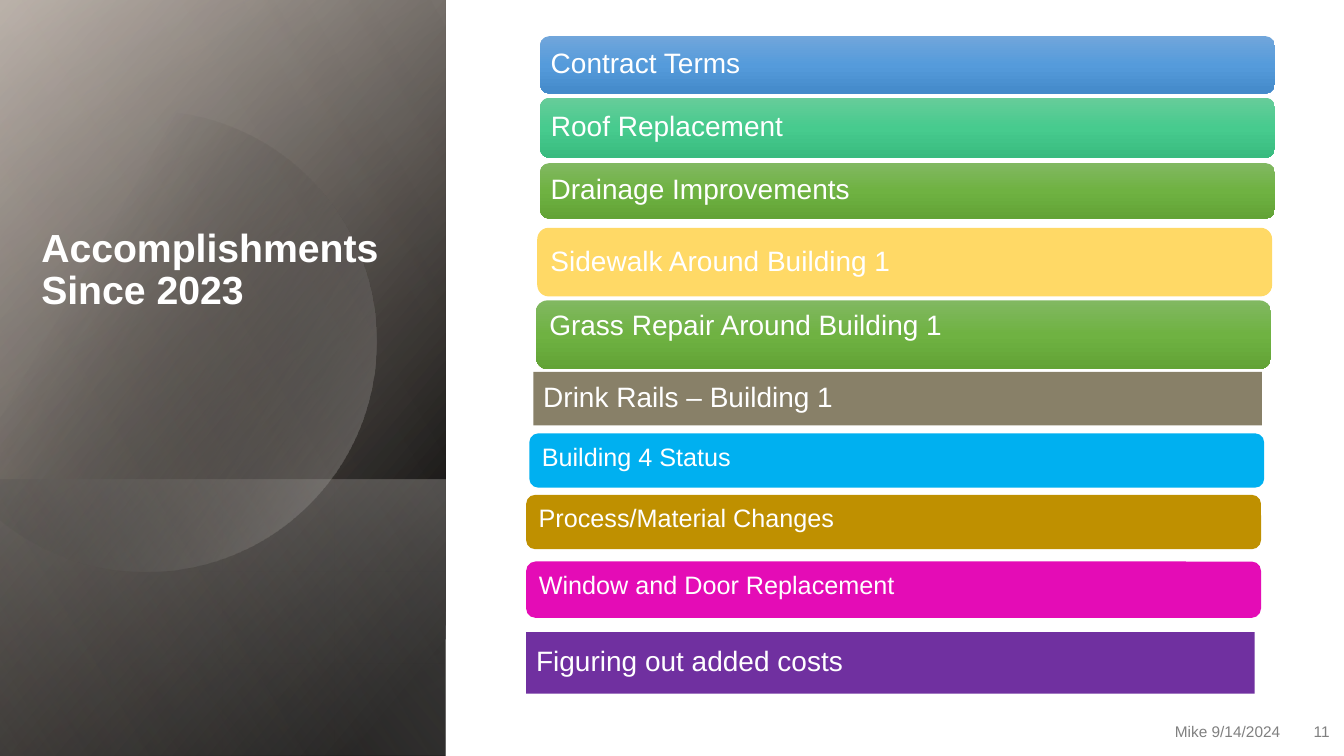
import math
from pptx import Presentation
from pptx import util as u
from pptx.dml.color import RGBColor
from pptx.enum import shapes, text
from pptx.oxml import parse_xml
from pptx.oxml.ns import nsdecls, qn

ROUND = shapes.MSO_SHAPE.ROUNDED_RECTANGLE
RECT = shapes.MSO_SHAPE.RECTANGLE
MIDDLE, TOP, BOTTOM = (text.MSO_ANCHOR.MIDDLE, text.MSO_ANCHOR.TOP,
                       text.MSO_ANCHOR.BOTTOM)

GREEN = ["81B861", "6FB242", "62A336"]
SMALL = {"size": 18, "anchor": TOP, "margins": (0.25, 0.13, 0.25, 0.13), "spacing": 1}
TIGHT = {"margins": (0.2, 0.2, 0.2, 0.2)}
RAISED = {"margins": (0.25, 0, 0.25, 0.43)}

BARS = [
    ("Contract Terms", ROUND, 0.35, 0, 1.45, ["71A6DB", "559BDB", "448ACA"], TIGHT),
    ("Roof Replacement", ROUND, 0.35, 1.55, 1.52, ["67CC9A", "47CB8E", "39BB7F"], TIGHT),
    ("Drainage Improvements", ROUND, 0.35, 3.2, 1.4, GREEN, TIGHT),
    ("Sidewalk Around Building 1", ROUND, 0.28, 4.83, 1.73, "FFD966", {}),
    ("Grass Repair Around Building 1", ROUND, 0.25, 6.66, 1.73, GREEN, RAISED),
    ("Drink Rails – Building 1", RECT, 0.18, 8.46, 1.35, "888068", {}),
    ("Building 4 Status", ROUND, 0.08, 10.01, 1.37, "00B0F0", SMALL),
    ("Process/Material Changes", ROUND, 0, 11.56, 1.37, "BF9000", SMALL),
    ("Window and Door Replacement", ROUND, 0, 13.24, 1.42, "E40CB6", SMALL),
    ("Figuring out added costs", RECT, 0, 15.02, 1.55, "7030A0", {}),
]


def color(value):
    return RGBColor.from_string(value)


def paint(shape, fill, angle=90):
    shape.shadow.inherit = False
    shape.line.fill.background()
    if isinstance(fill, str):
        shape.fill.solid()
        shape.fill.fore_color.rgb = color(fill)
        return
    stops = "".join(
        f'<a:gs pos="{position * 1000}"><a:srgbClr val="{color(value)}">'
        f'<a:alpha val="{alpha * 1000}"/></a:srgbClr></a:gs>'
        for position, value, alpha in fill)
    gradient = parse_xml(
        f'<a:gradFill {nsdecls("a")} rotWithShape="1"><a:gsLst>{stops}</a:gsLst>'
        f'<a:lin ang="{angle * 60000}" scaled="0"/></a:gradFill>')
    shape.fill.background()
    properties = shape._element.spPr
    properties.replace(properties.find(qn("a:noFill")), gradient)


def write(shape, words, size=20, bold=False, value="FFFFFF", anchor=MIDDLE,
          align=text.PP_ALIGN.LEFT, margins=(0.25, 0.25, 0.25, 0.25),
          spacing=0.9, after=0):
    frame = shape.text_frame
    frame.text = words
    left, top, right, bottom = map(u.Cm, margins)
    para = frame.paragraphs[0]
    font = para.runs[0].font
    formats = [
        (frame, {"word_wrap": True, "auto_size": text.MSO_AUTO_SIZE.NONE,
                 "vertical_anchor": anchor, "margin_left": left, "margin_top": top,
                 "margin_right": right, "margin_bottom": bottom}),
        (para, {"alignment": align, "line_spacing": spacing,
                "space_before": u.Pt(0), "space_after": u.Pt(after)}),
        (font, {"name": "Arial", "size": u.Pt(size), "bold": bold}),
    ]
    for target, values in formats:
        for name, setting in values.items():
            setattr(target, name, setting)
    font.color.rgb = color(value)


def add_shade(page, box, stops, angle):
    left, top, width, height = box
    shade = page.shapes.add_shape(
        RECT, u.Cm(left + (width - height) / 2), u.Cm(top + (height - width) / 2),
        u.Cm(height), u.Cm(width))
    shade.rotation = 90
    shade._element.spPr.find(qn("a:xfrm")).set("flipH", "1")
    paint(shade, stops, angle)


def add_disc(page, box):
    left, top, width, height = box
    center_x, center_y, radius, cut = left + 3.68, top + 8.59, 5.8, left - 0.38
    limit = math.acos((cut - center_x) / radius)
    steps = 120
    points = []
    for step in range(steps + 1):
        turn = limit * (2 * step / steps - 1)
        points.append((u.Cm(center_x + radius * math.cos(turn)),
                       u.Cm(center_y + radius * math.sin(turn))))
    builder = page.shapes.build_freeform(*points[0])
    builder.add_line_segments(points[1:], close=True)
    paint(builder.convert_to_shape(), [(29, "000000", 0), (100, "D8D2CD", 43)], 30)


def add_title_panel(page, box):
    left, top, width, height = box
    floor = 6.96
    add_shade(page, box, [(8, "000000", 100), (100, "AA9D92", 100)], 50)
    add_shade(page, box, [(0, "000000", 0), (99, "D8D2CD", 46)], 30)
    add_shade(page, (left, top + height - floor, width, floor),
              [(2, "D8D2CD", 29), (100, "000000", 30)], 130)
    add_disc(page, box)
    add_shade(page, box, [(0, "000000", 0), (99, "E8E4E1", 11)], 120)
    title = page.shapes.title
    place = {"left": left + 0.79, "top": top + 3.63, "width": 9.5, "height": 4.39}
    for name, length in place.items():
        setattr(title, name, u.Cm(length))
    write(title, "Accomplishments Since 2023", size=28, bold=True, anchor=BOTTOM,
          margins=(0.25, 0.13, 0.25, 0.13), after=6)
    page.shapes._spTree.append(title._element)


def add_bars(page, box):
    left, top, width = box
    for words, kind, indent, offset, height, fill, style in BARS:
        length = width if kind == ROUND else width - 0.16
        bar = page.shapes.add_shape(kind, u.Cm(left + indent), u.Cm(top + offset),
                                    u.Cm(length), u.Cm(height))
        if isinstance(fill, list):
            fill = [(50 * index, value, 100) for index, value in enumerate(fill)]
        paint(bar, fill)
        write(bar, words, **style)


def add_footer(page, box):
    left, top, width, height = box
    number_width = 1.24
    date_width = width - number_width
    for words, offset, length in [("Mike 9/14/2024", 0, date_width),
                                  ("11", date_width, number_width)]:
        note = page.shapes.add_textbox(u.Cm(left + offset), u.Cm(top),
                                       u.Cm(length), u.Cm(height))
        write(note, words, size=11, value="808080", align=text.PP_ALIGN.RIGHT,
              margins=(0.25, 0.13, 0.25, 0.13), spacing=1, after=6)


def main():
    deck = Presentation()
    deck.slide_width, deck.slide_height = u.Cm(33.87), u.Cm(19.05)
    page = deck.slides.add_slide(deck.slide_layouts[5])
    add_title_panel(page, (0, 0, 11.23, 19.05))
    add_bars(page, (13.26, 0.91, 18.52))
    add_footer(page, (24.91, 17.93, 8.85, 1.02))
    deck.save("out.pptx")


if __name__ == "__main__":
    main()
